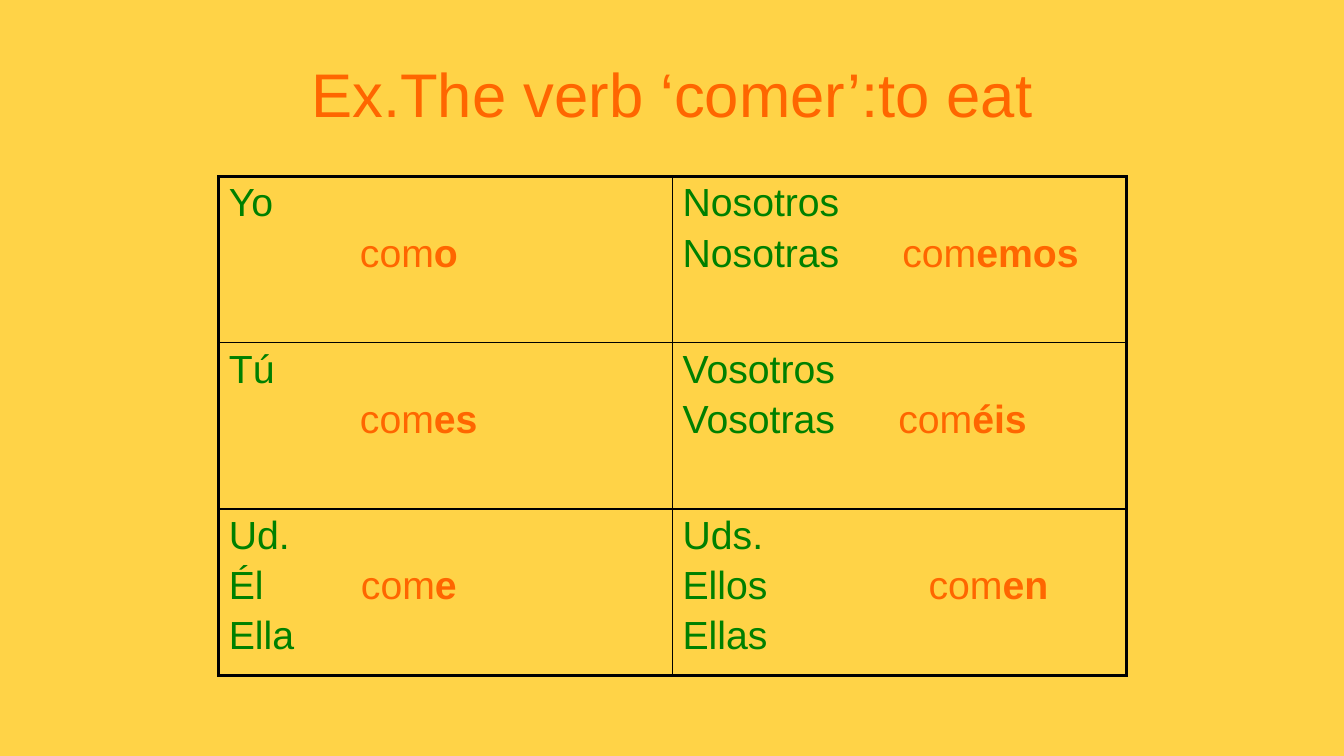
import lxml.etree
import pptx
import pptx.dml.color
import pptx.enum.text
import pptx.oxml.ns
import pptx.util

Inches = pptx.util.Inches
Pt = pptx.util.Pt
RGBColor = pptx.dml.color.RGBColor
qn = pptx.oxml.ns.qn

GOLD = RGBColor(0xFF, 0xD3, 0x47)
ORANGE = RGBColor(0xFF, 0x66, 0x00)
GREEN = RGBColor(0x00, 0x80, 0x00)
BLACK = RGBColor(0x00, 0x00, 0x00)

# Each cell: pronouns by line, verb ending, tab stop of the verb in inches
FORMS = [
    [(["Yo", ""], "o", 1.3), (["Nosotros", "Nosotras"], "emos", 2.18)],
    [(["Tú", ""], "es", 1.3), (["Vosotros", "Vosotras"], "éis", 2.14)],
    [(["Ud.", "Él", "Ella"], "e", 1.31), (["Uds.", "Ellos", "Ellas"], "en", 2.44)],
]
VERB_LINE = 1


def add_run(line, text, color, bold=False):
    run = line.add_run()
    run.text = text
    run.font.name = "Arial"
    run.font.size = Pt(28)
    run.font.bold = bold
    run.font.color.rgb = color


def set_edge(cell, side, width):
    """Draw one side (L, R, T or B) of a cell in black; width in points."""
    edge = lxml.etree.SubElement(cell._tc.get_or_add_tcPr(), qn("a:ln" + side), w=str(Pt(width)))
    fill = lxml.etree.SubElement(edge, qn("a:solidFill"))
    lxml.etree.SubElement(fill, qn("a:srgbClr"), val=str(BLACK))


deck = pptx.Presentation()
deck.slide_width = Inches(13.33)
deck.slide_height = Inches(7.5)
slide = deck.slides.add_slide(deck.slide_layouts[5])
slide.background.fill.solid()
slide.background.fill.fore_color.rgb = GOLD

title = slide.shapes.title
title.left, title.top = Inches(0.67), Inches(0.3)
title.width, title.height = Inches(12), Inches(1.25)
title.text_frame.text = "Ex.The verb ‘comer’:to eat"
title.text_frame.vertical_anchor = pptx.enum.text.MSO_ANCHOR.MIDDLE
head = title.text_frame.paragraphs[0]
head.alignment = pptx.enum.text.PP_ALIGN.CENTER
font = head.runs[0].font
font.name = "Arial"
font.size = Pt(44)
font.color.rgb = ORANGE

rows, cols = len(FORMS), len(FORMS[0])
frame = slide.shapes.add_table(rows, cols, Inches(2.17), Inches(1.75), Inches(9), Inches(4.95))
table = frame.table
table.first_row = False
table.horz_banding = False

for r, forms in enumerate(FORMS):
    for c, (nouns, ending, stop) in enumerate(forms):
        cell = table.cell(r, c)
        outer = {"L": c == 0, "R": c == cols - 1, "T": r == 0, "B": r == rows - 1}
        for side, thick in outer.items():
            set_edge(cell, side, 2.25 if thick else 1)
        cell.fill.background()

        for i, noun in enumerate(nouns):
            line = cell.text_frame.paragraphs[0] if i == 0 else cell.text_frame.add_paragraph()
            if i > 0:
                line.space_before = Pt(4.65)
            if noun:
                add_run(line, noun, GREEN)
            if i == VERB_LINE:
                tabs = lxml.etree.SubElement(line._p.get_or_add_pPr(), qn("a:tabLst"))
                lxml.etree.SubElement(tabs, qn("a:tab"), pos=str(Inches(stop)), algn="l")
                add_run(line, "\tcom", ORANGE)
                add_run(line, ending, ORANGE, bold=True)

deck.save("out.pptx")
